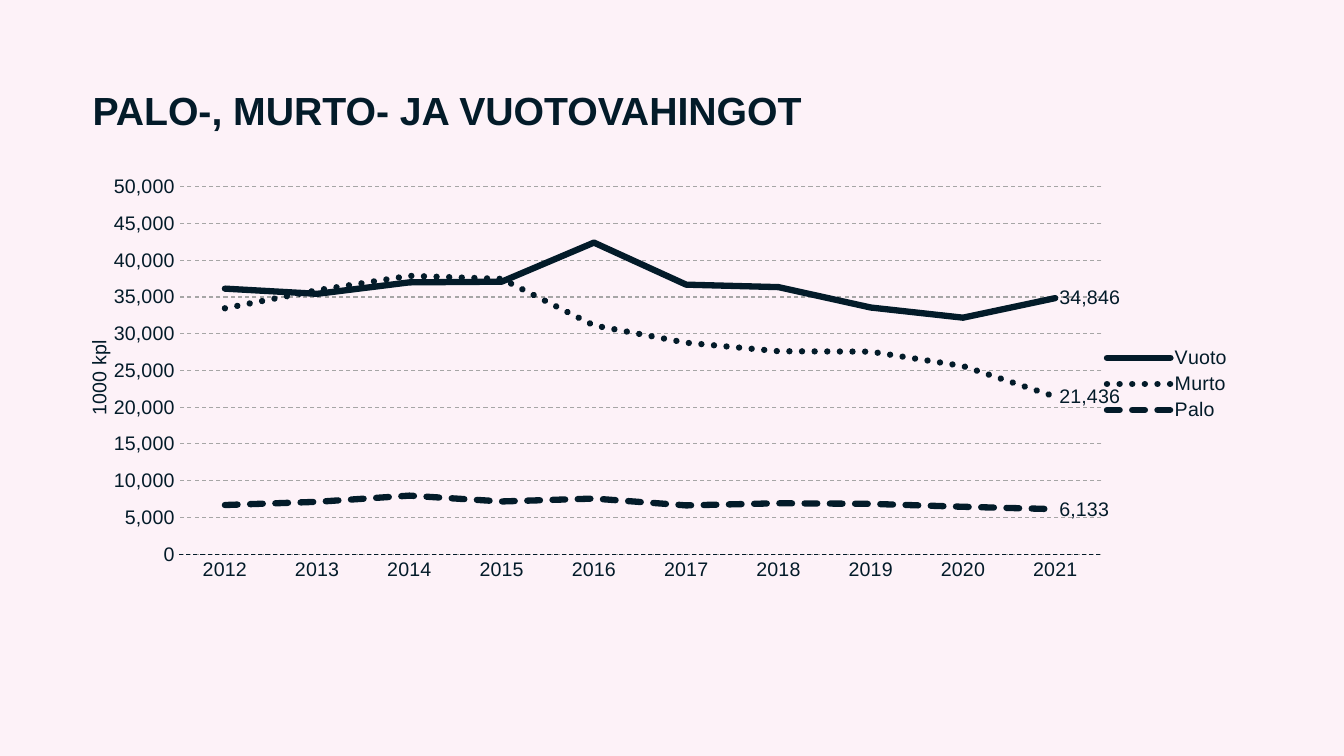
"""Build a slide with a line chart of fire, burglary and leak damages."""
import dataclasses

import lxml.etree
import pptx
import pptx.chart.data
import pptx.dml.color
import pptx.enum.chart
import pptx.enum.dml
import pptx.enum.text
import pptx.util

Pt = pptx.util.Pt
Dash = pptx.enum.dml.MSO_LINE
COLORS = {"ink": "031B29", "grid": "A6A6A6", "back": "FDF2F8"}
FACE = "Arial"
YEARS = [str(year) for year in range(2012, 2022)]
PLOT = {"x": 0.083, "y": 0.045, "w": 0.796, "h": 0.848}


@dataclasses.dataclass
class Trend:
    """One damage type, its yearly counts and its dash style."""
    name: str
    counts: list[int]
    dash: Dash


TRENDS = [
    Trend("Vuoto", [36140, 35431, 36993, 37082, 42399, 36680, 36345, 33568, 32186, 34846],
          Dash.SOLID),
    Trend("Murto", [33459, 35917, 37879, 37466, 31135, 28781, 27623, 27566, 25604, 21436],
          Dash.ROUND_DOT),
    Trend("Palo", [6690, 7132, 7974, 7176, 7573, 6642, 6934, 6856, 6457, 6133],
          Dash.SQUARE_DOT),
]


def tint(name: str) -> pptx.dml.color.RGBColor:
    """Return a named colour."""
    return pptx.dml.color.RGBColor.from_string(COLORS[name])


def style(font, size: float, bold: bool = False) -> None:
    """Set face, size, weight and colour of a font."""
    font.name, font.size, font.bold = FACE, Pt(size), bold
    font.color.rgb = tint("ink")


def stroke(line, color: str, width: float, dash: Dash) -> None:
    """Set colour, width and dash of a line."""
    line.color.rgb = tint(color)
    line.width = Pt(width)
    line.dash_style = dash


def place(area) -> None:
    """Fix the inner plot area at its share of the chart."""
    for old in area.xpath("c:layout"):
        area.remove(old)
    space = area.nsmap["c"]
    layout = lxml.etree.Element(f"{{{space}}}layout")
    manual = lxml.etree.SubElement(layout, f"{{{space}}}manualLayout")
    rules = {"layoutTarget": "inner", "xMode": "edge", "yMode": "edge", **PLOT}
    for tag, value in rules.items():
        lxml.etree.SubElement(manual, f"{{{space}}}{tag}", val=str(value))
    area.insert(0, layout)


def set_axes(chart) -> None:
    """Format both axes, the grid and the axis title."""
    ticks = pptx.enum.chart.XL_TICK_MARK
    for axis in (chart.category_axis, chart.value_axis):
        axis.major_tick_mark = axis.minor_tick_mark = ticks.NONE
        style(axis.tick_labels.font, 14)
    stroke(chart.category_axis.format.line, "ink", 0.75, Dash.DASH)
    scale = chart.value_axis
    scale.minimum_scale, scale.maximum_scale, scale.major_unit = 0, 50000, 5000
    scale.format.line.fill.background()
    scale.tick_labels.number_format = "#,##0"
    scale.tick_labels.number_format_is_linked = False
    stroke(scale.major_gridlines.format.line, "grid", 0.75, Dash.DASH)
    frame = scale.axis_title.text_frame
    frame.text = "1000 kpl"
    style(frame.paragraphs[0].runs[0].font, 14)


def add_trends(slide) -> None:
    """Add the line chart with a label at the end of each line."""
    data = pptx.chart.data.CategoryChartData(number_format="#,##0")
    data.categories = YEARS
    for trend in TRENDS:
        data.add_series(trend.name, trend.counts)
    kind = pptx.enum.chart.XL_CHART_TYPE.LINE
    chart = slide.shapes.add_chart(kind, Pt(59), Pt(119.5), Pt(828), Pt(309.6), data).chart
    style(chart.font, 14)
    chart.has_title = False
    chart.has_legend = True
    chart.legend.position = pptx.enum.chart.XL_LEGEND_POSITION.RIGHT
    chart.legend.include_in_layout = False
    style(chart.legend.font, 14)
    set_axes(chart)
    chart.plots[0].vary_by_categories = False
    for trend, series in zip(TRENDS, chart.plots[0].series):
        series.smooth = False
        stroke(series.format.line, "ink", 4.5, trend.dash)
        series.data_labels.show_value = False
        label = series.points[len(YEARS) - 1].data_label
        style(label.font, 14)
        label.position = pptx.enum.chart.XL_LABEL_POSITION.RIGHT
    for line in chart.element.xpath(".//c:ser/c:spPr/a:ln"):
        line.set("cap", "rnd")
    place(chart.element.xpath(".//c:plotArea")[0])


def add_title(slide) -> None:
    """Fill and format the title placeholder."""
    title = slide.shapes.title
    title.left, title.top, title.width, title.height = Pt(59), Pt(28), Pt(828), Pt(104.4)
    frame = title.text_frame
    frame.text = "PALO-, MURTO- JA VUOTOVAHINGOT"
    frame.vertical_anchor = pptx.enum.text.MSO_ANCHOR.MIDDLE
    head = frame.paragraphs[0]
    head.alignment = pptx.enum.text.PP_ALIGN.LEFT
    head.line_spacing = 0.9
    style(head.runs[0].font, 28, True)


def main() -> None:
    """Build and save the deck."""
    deck = pptx.Presentation()
    deck.slide_width, deck.slide_height = Pt(960), Pt(540)
    slide = deck.slides.add_slide(deck.slide_layouts[5])
    slide.background.fill.solid()
    slide.background.fill.fore_color.rgb = tint("back")
    add_title(slide)
    add_trends(slide)
    deck.save("out.pptx")


if __name__ == "__main__":
    main()
